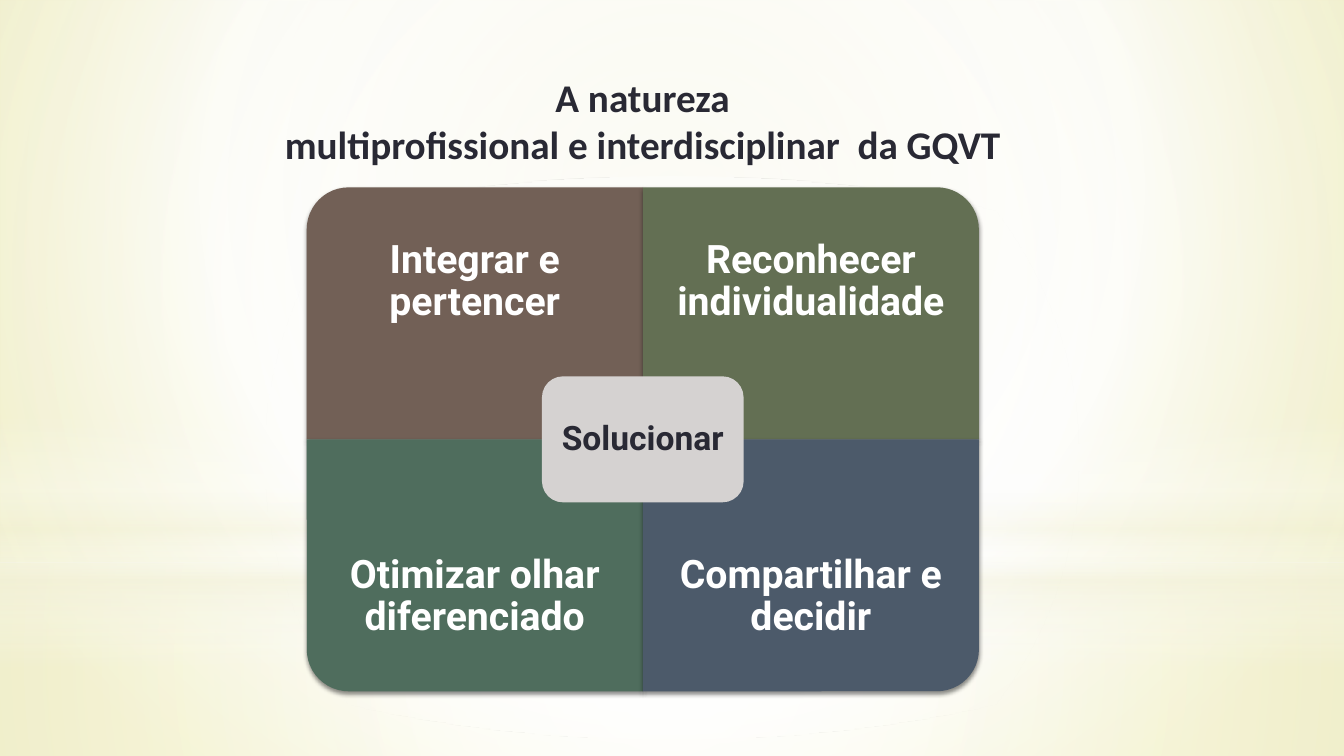
from dataclasses import dataclass

import pptx
import pptx.dml.color
import pptx.enum.shapes
import pptx.enum.text
import pptx.oxml
import pptx.oxml.ns
import pptx.util
from pptx.util import Cm

SHAPE = pptx.enum.shapes.MSO_SHAPE
ANCHOR = pptx.enum.text.MSO_ANCHOR


@dataclass(frozen=True)
class Theme:
    ink: str = "292934"
    white: str = "FFFFFF"
    cream: str = "F3F2DC"
    center: str = "D5D2D1"
    quadrants: tuple = ("726056", "636F53", "4F6D5D", "4C5A6A")
    title_font: str = "Calibri"
    body_font: str = "Roboto"
    large: int = 28
    medium: int = 24


THEME = Theme()
WIDTH, HEIGHT = 33.87, 19.05
CELL_W, CELL_H = 8.47, 6.35
MID_X, MID_Y = 16.2, 11.07


def rgb(color):
    return pptx.dml.color.RGBColor.from_string(color)


def parse_xml(tag, body):
    """Build one DrawingML element from its tag with attributes and its content."""
    name = tag.split()[0]
    ns = pptx.oxml.ns.nsdecls("a")
    return pptx.oxml.parse_xml(f"<a:{tag} {ns}>{body}</a:{name}>")


def set_gradient(owner, stops, focus=None, angle=0):
    """Turn the owner's solid fill into a gradient of (position, colour, opacity) stops.

    A focus (left, top, right, bottom, in percent) makes it radial, else it is linear.
    """
    gs = "".join(
        f'<a:gs pos="{pos * 1000}"><a:srgbClr val="{color}">'
        f'<a:alpha val="{alpha * 1000}"/></a:srgbClr></a:gs>'
        for pos, color, alpha in stops)
    if focus:
        sides = " ".join(f'{side}="{v * 1000}"' for side, v in zip("ltrb", focus))
        way = f'<a:path path="circle"><a:fillToRect {sides}/></a:path>'
    else:
        way = f'<a:lin ang="{angle * 60000}" scaled="0"/>'
    solid = owner.xpath(".//a:solidFill")[0]
    grad = parse_xml('gradFill rotWithShape="1"', f"<a:gsLst>{gs}</a:gsLst>{way}")
    solid.getparent().replace(solid, grad)


def add_block(s, kind, left, top, width, height, color=THEME.white):
    sp = s.shapes.add_shape(kind, Cm(left), Cm(top), Cm(width), Cm(height))
    sp.shadow.inherit = False
    sp.fill.solid()
    sp.fill.fore_color.rgb = rgb(color)
    sp.line.fill.background()
    return sp


def add_shadow(sp):
    shadow = parse_xml(
        'outerShdw blurRad="39370" dist="22860" dir="5400000" rotWithShape="0"',
        '<a:srgbClr val="000000"><a:alpha val="45000"/></a:srgbClr>')
    sp._element.spPr.xpath("a:effectLst")[0].append(shadow)


def add_text(s, text, left, top, width, height, *, font=THEME.body_font,
             size=THEME.large, color=THEME.white, inset=None, spacing=None,
             anchor=ANCHOR.MIDDLE):
    tf = s.shapes.add_textbox(Cm(left), Cm(top), Cm(width), Cm(height)).text_frame
    tf.word_wrap = True
    tf.vertical_anchor = anchor
    if inset is not None:
        tf.margin_left = tf.margin_right = Cm(inset)
        tf.margin_top = tf.margin_bottom = Cm(inset)
    tf.text = text
    for p in tf.paragraphs:
        p.alignment = pptx.enum.text.PP_ALIGN.CENTER
        p.line_spacing = spacing
        for r in p.runs:
            r.font.name = font
            r.font.size = pptx.util.Pt(size)
            r.font.bold = True
            r.font.color.rgb = rgb(color)


def add_backdrop(s):
    white, cream, middle = THEME.white, THEME.cream, (50, 50, 50, 50)
    s.background.fill.solid()
    set_gradient(s._element.xpath(".//p:bg")[0],
                 [(0, "EFEDCC", 100), (60, white, 100), (100, "E9E58A", 100)],
                 focus=(20, 10, 20, 60))
    horizon = 14.17
    layers = [
        (SHAPE.RECTANGLE, horizon, HEIGHT - horizon, middle,
         [(0, white, 91), (37, white, 76), (100, cream, 79)]),
        (SHAPE.RECTANGLE, 0, horizon, middle,
         [(0, white, 89), (48, white, 62), (100, cream, 79)]),
        (SHAPE.RECTANGLE, 10.46, 6.35, None,
         [(0, white, 0), (29, white, 30), (45, cream, 40),
          (55, white, 26), (65, cream, 60), (100, white, 0)]),
        (SHAPE.OVAL, 4.45, 14.17, middle, [(0, white, 100), (56, white, 0)]),
    ]
    for kind, top, height, focus, stops in layers:
        sp = add_block(s, kind, 0, top, WIDTH, height)
        set_gradient(sp._element.spPr, stops, focus=focus, angle=90)


def add_quadrant(s, row, col, text, color):
    """Add one cell of the matrix, its rounded corner turned outwards."""
    left, top = MID_X + (col - 1) * CELL_W, MID_Y + (row - 1) * CELL_H
    rotation = ((270, 0), (180, 90))[row][col]
    w, h = (CELL_H, CELL_W) if rotation % 180 else (CELL_W, CELL_H)
    sp = add_block(s, SHAPE.ROUND_1_RECTANGLE, left + (CELL_W - w) / 2,
                   top + (CELL_H - h) / 2, w, h, color)
    sp.rotation = rotation
    add_shadow(sp)
    text_h = CELL_H * 0.75
    add_text(s, text, left, top + row * (CELL_H - text_h), CELL_W, text_h,
             inset=0.56, spacing=0.9)


def add_center(s, text):
    w, h, pad = CELL_W * 0.6, CELL_H / 2, 0.15
    left, top = MID_X - w / 2, MID_Y - h / 2
    add_block(s, SHAPE.ROUNDED_RECTANGLE, left, top, w, h, THEME.center)
    add_text(s, text, left + pad, top + pad, w - 2 * pad, h - 2 * pad,
             size=THEME.medium, color=THEME.ink, inset=0.25, spacing=0.9)


def main():
    prs = pptx.Presentation()
    prs.slide_width, prs.slide_height = Cm(WIDTH), Cm(HEIGHT)
    s = prs.slides.add_slide(prs.slide_layouts[6])
    add_backdrop(s)
    add_text(s, "A natureza\nmultiprofissional e interdisciplinar  da GQVT",
             5.54, 1.73, 21.31, 3.68, font=THEME.title_font, color=THEME.ink,
             anchor=ANCHOR.TOP)
    labels = ("Integrar e pertencer", "Reconhecer individualidade",
              "Otimizar olhar diferenciado", "Compartilhar e decidir")
    for i, (label, color) in enumerate(zip(labels, THEME.quadrants)):
        add_quadrant(s, *divmod(i, 2), label, color)
    add_center(s, "Solucionar")
    prs.save("out.pptx")


if __name__ == "__main__":
    main()
